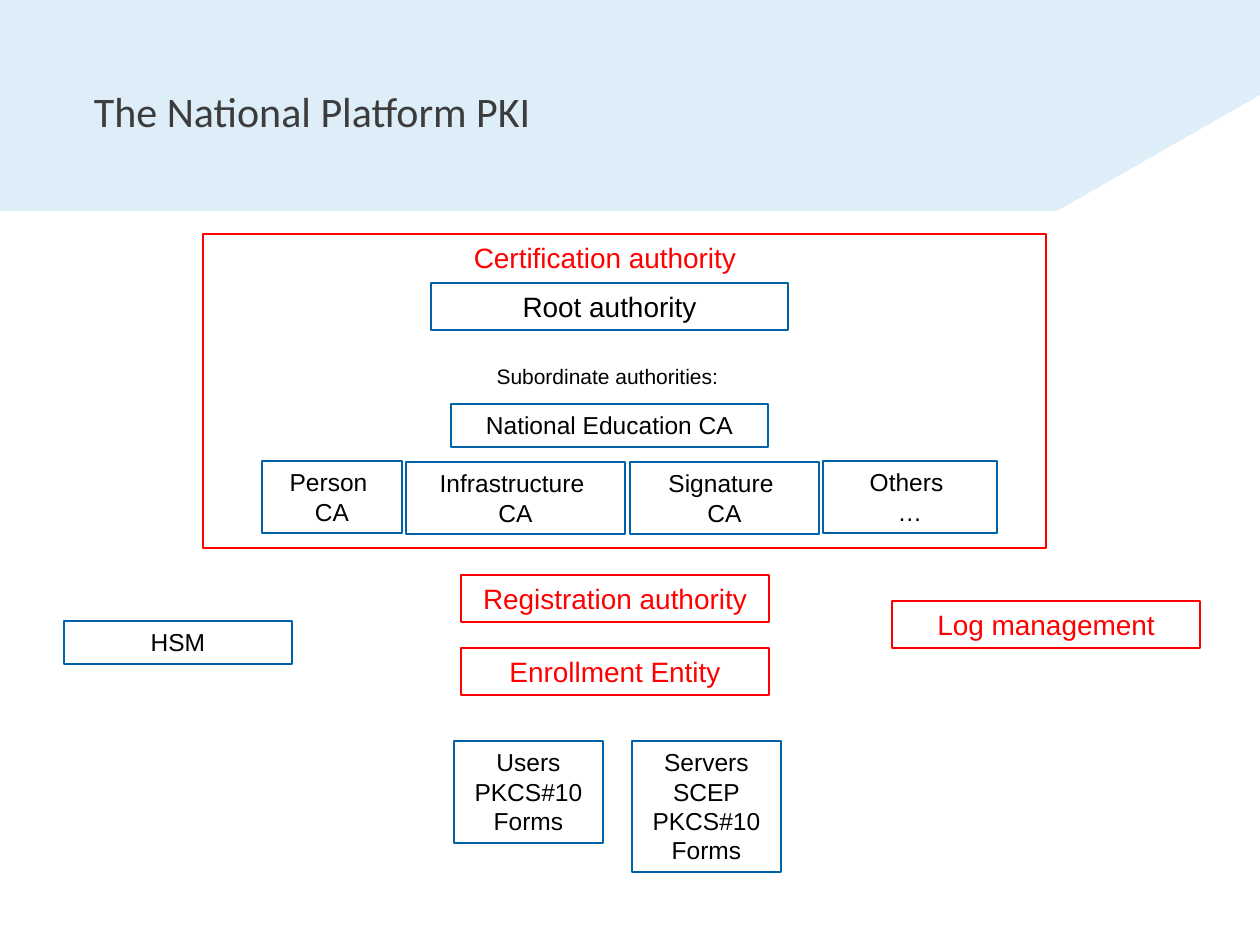
from dataclasses import dataclass

from pptx import Presentation
from pptx import util as u
from pptx.dml import color
from pptx.enum import shapes, text

PX_PER_INCH = 126


@dataclass(frozen=True)
class Theme:
    band: str = "DEEEF8"
    title: str = "3C3C3C"
    ink: str = "000000"
    blue: str = "0062A8"
    red: str = "FF0000"
    heading_font: str = "Calibri"
    body_font: str = "Arial"
    title_size: int = 24
    large: int = 16
    medium: int = 14
    small: int = 12
    outline: float = 0.75


THEME = Theme()


@dataclass(frozen=True)
class Node:
    left: int
    top: int
    width: int
    height: int
    lines: tuple[str, ...] = ()
    outline: str | None = THEME.blue
    ink: str = THEME.ink
    size: int = THEME.medium


def px(length: int) -> u.Emu:
    return u.Emu(round(length * u.Inches(1) / PX_PER_INCH))


def rgb(value: str) -> color.RGBColor:
    return color.RGBColor.from_string(value)


def write_text(box, lines: tuple[str, ...], *, font: str, size: int, ink: str,
               align=text.PP_ALIGN.CENTER, anchor=text.MSO_ANCHOR.TOP) -> None:
    frame = box.text_frame
    frame.word_wrap = True
    frame.vertical_anchor = anchor
    for index, line in enumerate(lines):
        para = frame.add_paragraph() if index else frame.paragraphs[0]
        para.alignment = align
        span = para.add_run()
        span.text = line
        span.font.name = font
        span.font.size = u.Pt(size)
        span.font.color.rgb = rgb(ink)


def draw_node(page, node: Node) -> None:
    place = [px(v) for v in (node.left, node.top, node.width, node.height)]
    if node.outline:
        box = page.shapes.add_shape(shapes.MSO_SHAPE.RECTANGLE, *place)
        box.shadow.inherit = False
        box.fill.background()
        box.line.color.rgb = rgb(node.outline)
        box.line.width = u.Pt(THEME.outline)
    else:
        box = page.shapes.add_textbox(*place)
    if node.lines:
        write_text(box, node.lines, font=THEME.body_font, size=node.size, ink=node.ink)
        box.text_frame.auto_size = text.MSO_AUTO_SIZE.SHAPE_TO_FIT_TEXT


def draw_header(page) -> None:
    builder = page.shapes.build_freeform(px(1260), px(0))
    corners = [(0, 0), (0, 211), (1057, 211), (1260, 95)]
    builder.add_line_segments([(px(x), px(y)) for x, y in corners], close=True)
    band = builder.convert_to_shape()
    band.shadow.inherit = False
    band.fill.solid()
    band.fill.fore_color.rgb = rgb(THEME.band)
    band.line.fill.background()

    title = page.shapes.add_textbox(px(94), px(18), px(1071), px(186))
    frame = title.text_frame
    frame.margin_left = frame.margin_right = frame.margin_top = frame.margin_bottom = 0
    write_text(title, ("The National Platform PKI",), font=THEME.heading_font,
               size=THEME.title_size, ink=THEME.title,
               align=text.PP_ALIGN.LEFT, anchor=text.MSO_ANCHOR.MIDDLE)


def red_node(left: int, top: int, label: str) -> Node:
    return Node(left, top, 308, 47, (label,), THEME.red, THEME.red, THEME.large)


NODES = [
    Node(203, 234, 843, 314, outline=THEME.red),
    Node(451, 234, 308, 47, ("Certification authority",), None, THEME.red, THEME.large),
    Node(431, 283, 357, 47, ("Root authority",), size=THEME.large),
    Node(392, 357, 431, 38, ("Subordinate authorities:",), None, size=THEME.small),
    Node(451, 404, 317, 43, ("National Education CA",)),
    Node(262, 461, 140, 72, ("Person ", "CA")),
    Node(406, 462, 219, 72, ("Infrastructure ", "CA")),
    Node(630, 462, 189, 72, ("Signature ", "CA")),
    Node(823, 461, 174, 72, ("Others ", "…")),
    red_node(461, 575, "Registration authority"),
    red_node(461, 648, "Enrollment Entity"),
    red_node(892, 601, "Log management"),
    Node(64, 621, 228, 43, ("HSM",)),
    Node(454, 741, 149, 102, ("Users", "PKCS#10", "Forms")),
    Node(632, 741, 149, 131, ("Servers", "SCEP", "PKCS#10", "Forms")),
]


def main() -> None:
    deck = Presentation()
    deck.slide_width, deck.slide_height = px(1260), px(945)
    page = deck.slides.add_slide(deck.slide_layouts[6])
    draw_header(page)
    for node in NODES:
        draw_node(page, node)
    deck.save("out.pptx")


if __name__ == "__main__":
    main()
